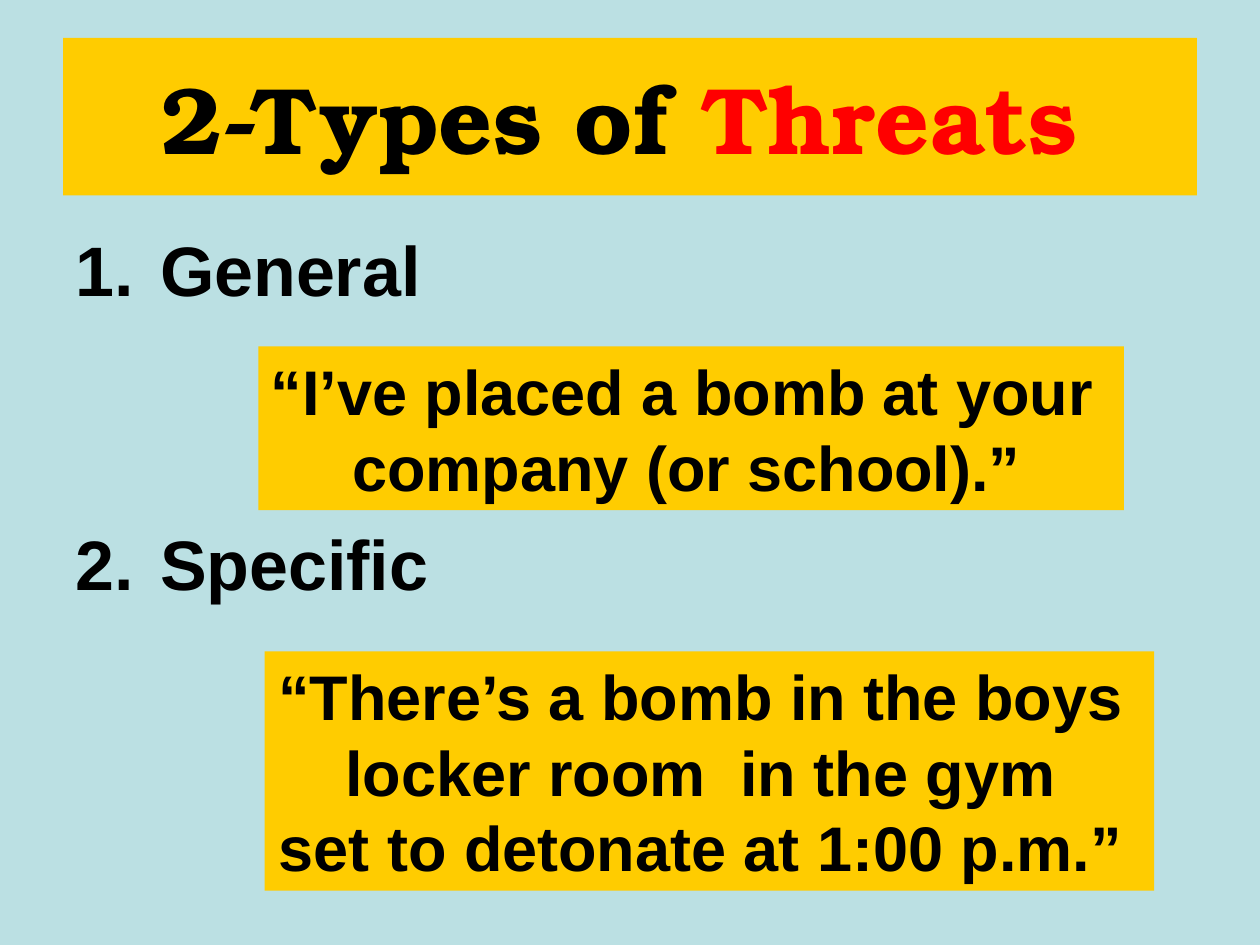
"""Build the slide on the two types of bomb threats."""
from dataclasses import dataclass

from lxml import etree
from pptx import Presentation
from pptx.dml.color import RGBColor
from pptx.enum.shapes import MSO_SHAPE
from pptx.enum.text import MSO_ANCHOR, MSO_AUTO_SIZE, PP_ALIGN
from pptx.oxml.ns import qn
from pptx.util import Inches, Pt

CENTER, LEFT = PP_ALIGN.CENTER, PP_ALIGN.LEFT
MIDDLE, TOP = MSO_ANCHOR.MIDDLE, MSO_ANCHOR.TOP
NO_FIT, GROW = MSO_AUTO_SIZE.NONE, MSO_AUTO_SIZE.SHAPE_TO_FIT_TEXT
RECTANGLE = MSO_SHAPE.RECTANGLE


@dataclass(frozen=True)
class Theme:
    background: str = "BBE0E3"
    panel: str = "FFCC00"
    ink: str = "000000"
    alert: str = "FF0000"
    display: str = "TeX Gyre Bonum"
    sans: str = "Arial"
    title: int = 54
    heading: int = 40
    quote: int = 36
    title_tail: int = 44
    quote_tail: int = 18


THEME = Theme()
TITLE_STYLE = (THEME.display, THEME.title, THEME.ink, True)
ALERT_STYLE = (THEME.display, THEME.title, THEME.alert, True)
TITLE_TAIL = (THEME.sans, THEME.title_tail, THEME.ink, False)
HEADING_STYLE = (THEME.sans, THEME.heading, THEME.ink, True)
QUOTE_STYLE = (THEME.sans, THEME.quote, THEME.ink, True)
QUOTE_TAIL = (THEME.sans, THEME.quote_tail, THEME.ink, False)

TITLE = [[("2-Types of ", TITLE_STYLE), ("Threats", ALERT_STYLE), (" ", TITLE_TAIL)]]
TITLE_BOX = (0.5, 0.3, 9, 1.25)
THREATS = [("General", 8), ("Specific", 120)]
THREATS_BOX = (0.5, 1.75, 9, 4.95)
NUMBER_INDENT = 0.67
QUOTES = [
    ((2.05, 2.75, 6.87, 1.3), [
        [("“I’ve placed a bomb at your ", QUOTE_STYLE)],
        [("company (or school).”", QUOTE_STYLE), (" ", QUOTE_TAIL)],
    ]),
    ((2.1, 5.17, 7.06, 1.9), [
        [("“There’s a bomb in the boys ", QUOTE_STYLE)],
        [("locker room  in the gym ", QUOTE_STYLE)],
        [("set to detonate at 1:00 p.m.” ", QUOTE_STYLE)],
    ]),
]


def place(part, box):
    part.left, part.top, part.width, part.height = map(Inches, box)


def paint(part, color):
    part.fill.solid()
    part.fill.fore_color.rgb = RGBColor.from_string(color)


def write(part, lines, align, anchor, fit, wrap):
    frame = part.text_frame
    frame.auto_size, frame.word_wrap, frame.vertical_anchor = fit, wrap, anchor
    for index, line in enumerate(lines):
        paragraph = frame.add_paragraph() if index else frame.paragraphs[0]
        paragraph.alignment = align
        for words, (face, size, color, bold) in line:
            run = paragraph.add_run()
            run.text = words
            run.font.name, run.font.size, run.font.bold = face, Pt(size), bold
            run.font.color.rgb = RGBColor.from_string(color)
    return frame.paragraphs


def number(paragraph, gap):
    paragraph.space_before = Pt(gap)
    properties = paragraph._p.get_or_add_pPr()
    properties.set("marL", str(Inches(NUMBER_INDENT)))
    properties.set("indent", str(-Inches(NUMBER_INDENT)))
    etree.SubElement(properties, qn("a:buAutoNum"), type="arabicPeriod")


def main():
    deck = Presentation()
    deck.slide_width, deck.slide_height = Inches(10), Inches(7.5)
    slide = deck.slides.add_slide(deck.slide_layouts[1])
    paint(slide.background, THEME.background)

    title, threats = slide.placeholders
    place(title, TITLE_BOX)
    paint(title, THEME.panel)
    write(title, TITLE, CENTER, MIDDLE, NO_FIT, True)

    place(threats, THREATS_BOX)
    headings = [[(name, HEADING_STYLE)] for name, _ in THREATS]
    paragraphs = write(threats, headings, LEFT, TOP, NO_FIT, True)
    for paragraph, (_, gap) in zip(paragraphs, THREATS):
        number(paragraph, gap)

    for box, lines in QUOTES:
        quote = slide.shapes.add_shape(RECTANGLE, *map(Inches, box))
        quote.shadow.inherit = False
        paint(quote, THEME.panel)
        quote.line.fill.background()
        write(quote, lines, CENTER, TOP, GROW, False)

    deck.save("out.pptx")


if __name__ == "__main__":
    main()
